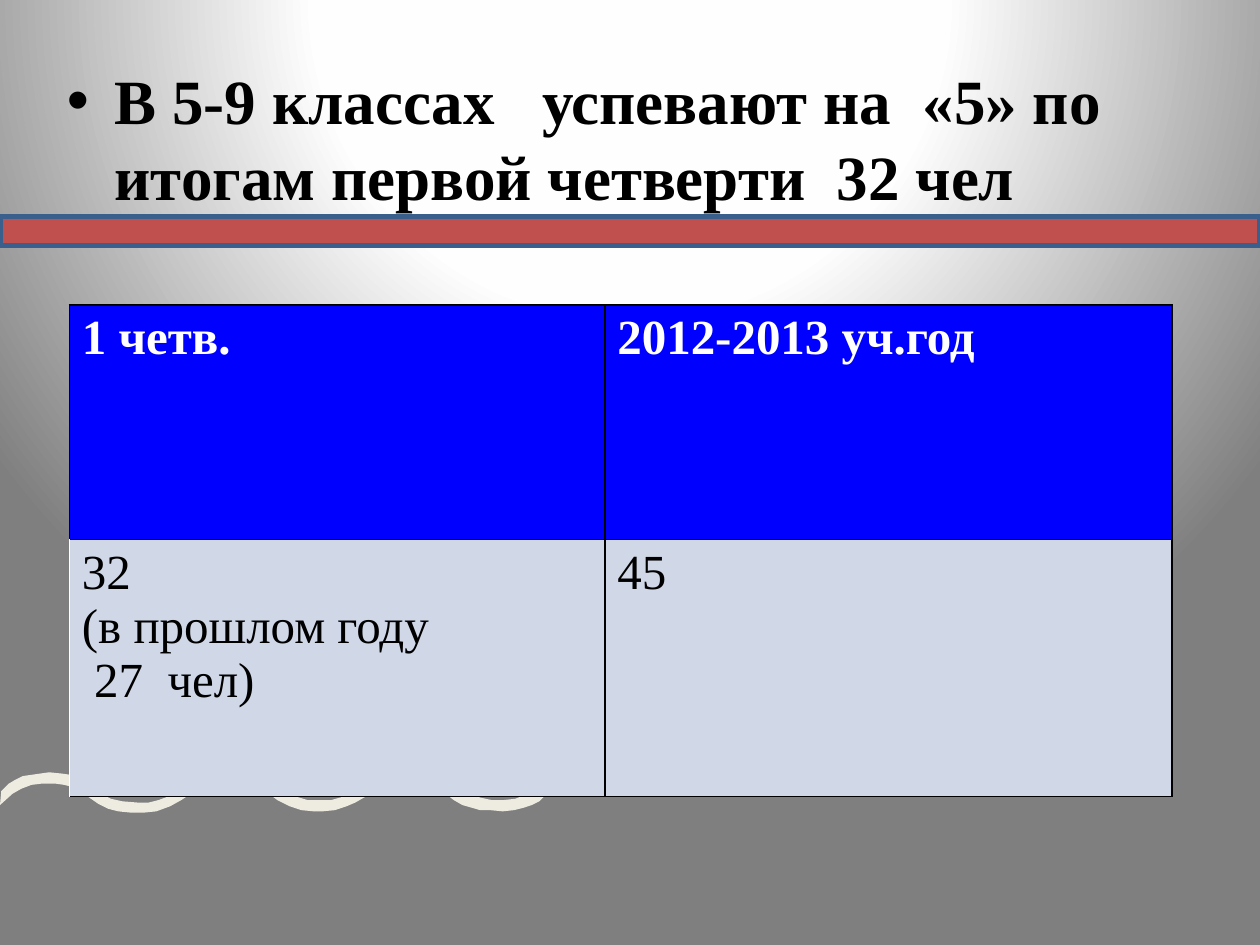
from lxml import etree
from pptx import Presentation
from pptx.dml.color import RGBColor
from pptx.oxml import parse_xml
from pptx.oxml.ns import nsdecls, qn
from pptx.enum.shapes import MSO_SHAPE
from pptx.enum.text import MSO_ANCHOR, MSO_AUTO_SIZE
from pptx.util import Pt

RECT = MSO_SHAPE.RECTANGLE
TOP = MSO_ANCHOR.TOP
NO_FIT = MSO_AUTO_SIZE.NONE

PX = 9144  # 100 px to the inch
FONT = "Times New Roman"
COLORS = {
    "white": "FFFFFF", "near_white": "FEFEFE", "gray": "7F7F7F", "black": "000000",
    "cream": "EEECE1", "blue": "0000FF", "pale": "D0D8E8",
    "red": "C0504D", "steel": "3A5F8C",
}
STOPS = [(0, "white"), (40, "near_white"), (100, "gray")]

# Outline of the wavy ribbon, in px from the corner of its box
WAVE = [
    (1, 17), (7, 11), (12, 8), (18, 5), (25, 4), (39, 2), (49, 3), (56, 4), (62, 6),
    (71, 11), (82, 20), (88, 23), (97, 25), (109, 26), (118, 26), (126, 24), (134, 21),
    (140, 17), (149, 10), (156, 7), (165, 3), (173, 1), (181, 1), (194, 2), (205, 4),
    (211, 7), (219, 12), (227, 18), (234, 21), (244, 24), (263, 24), (270, 22), (277, 20),
    (284, 15), (296, 7), (305, 4), (311, 2), (320, 1), (331, 0), (340, 1), (348, 4),
    (354, 6), (360, 10), (368, 16), (374, 19), (381, 22), (390, 24), (400, 24), (409, 23),
    (419, 19), (428, 12), (430, 11), (432, 11), (434, 12), (435, 14), (435, 19), (432, 21),
    (428, 25), (422, 28), (416, 30), (408, 32), (399, 33), (389, 32), (381, 32), (374, 30),
    (367, 28), (360, 24), (350, 16), (343, 12), (336, 10), (327, 9), (319, 9), (308, 12),
    (296, 18), (282, 26), (275, 29), (266, 32), (256, 33), (249, 33), (239, 32), (230, 29),
    (220, 24), (208, 15), (202, 12), (196, 10), (186, 9), (177, 9), (169, 10), (159, 14),
    (144, 24), (135, 29), (124, 33), (114, 34), (104, 34), (94, 33), (86, 31), (78, 27),
    (65, 18), (59, 14), (51, 12), (44, 11), (33, 11), (25, 12), (17, 15), (10, 19), (0, 28),
]


def rgb(name):
    return RGBColor.from_string(COLORS[name])


def emu(*lengths):
    return [n * PX for n in lengths]


def format_font(font, color, **values):
    font.color.rgb = rgb(color)
    for name, value in {"name": FONT, **values}.items():
        setattr(font, name, value)


def add_background(slide):
    """Radial gradient centred above the top edge."""
    fill = slide.background.fill
    fill.solid()
    solid = slide.element.find(".//" + qn("p:bgPr")).find(qn("a:solidFill"))
    stops = "".join(
        f'<a:gs pos="{pos * 1000}"><a:srgbClr val="{COLORS[c]}"/></a:gs>' for pos, c in STOPS)
    solid.getparent().replace(solid, parse_xml(
        f'<a:gradFill rotWithShape="1" {nsdecls("a")}><a:gsLst>{stops}</a:gsLst>'
        '<a:path path="circle"><a:fillToRect l="50000" t="-80000" r="50000" b="180000"/>'
        '</a:path></a:gradFill>'))


def add_wave(slide, left, top):
    points = [(left + x, top + y) for x, y in WAVE]
    builder = slide.shapes.build_freeform(*points[0], scale=PX)
    builder.add_line_segments(points[1:], close=True)
    sp = builder.convert_to_shape()
    sp.shadow.inherit = False
    sp.fill.solid()
    sp.fill.fore_color.rgb = rgb("cream")
    sp.line.fill.background()


def fill_body(body, box, text):
    body.left, body.top, body.width, body.height = emu(*box)
    tf = body.text_frame
    tf.auto_size = NO_FIT
    tf.vertical_anchor = TOP
    p = tf.paragraphs[0]
    pPr = p._p.get_or_add_pPr()
    pPr.set("marL", str(38 * PX))
    pPr.set("indent", str(-38 * PX))
    etree.SubElement(pPr, qn("a:buFont")).set("typeface", "Arial")
    etree.SubElement(pPr, qn("a:buChar")).set("char", "•")
    p.space_before = Pt(0)
    r = p.add_run()
    r.text = text
    format_font(r.font, "black", size=Pt(36), bold=True)


def set_borders(cell, left="black"):
    tcPr = cell._tc.get_or_add_tcPr()
    sides = {"lnL": left, "lnR": "black", "lnT": "black", "lnB": "black"}
    for i, (side, color) in enumerate(sides.items()):
        tcPr.insert(i, parse_xml(
            f'<a:{side} w="{Pt(1)}" {nsdecls("a")}><a:solidFill>'
            f'<a:srgbClr val="{COLORS[color]}"/></a:solidFill></a:{side}>'))


def add_results(slide, left, top, widths, heights, rows):
    frame = slide.shapes.add_table(
        len(heights), len(widths), *emu(left, top, sum(widths), sum(heights)))
    table = frame.table
    for col, width in zip(table.columns, widths):
        col.width = width * PX
    for i, (row, height, texts) in enumerate(zip(table.rows, heights, rows)):
        row.height = height * PX
        header = i == 0
        for j, text in enumerate(texts):
            cell = table.cell(i, j)
            cell.text = text
            cell.fill.solid()
            cell.fill.fore_color.rgb = rgb("blue" if header else "pale")
            set_borders(cell, "white" if not header and j == 0 else "black")
            for p in cell.text_frame.paragraphs:
                for r in p.runs:
                    format_font(r.font, "white" if header else "black",
                                size=Pt(28), bold=header)


def add_divider(slide, *box):
    sp = slide.shapes.add_shape(RECT, *emu(*box))
    sp.shadow.inherit = False
    sp.fill.solid()
    sp.fill.fore_color.rgb = rgb("red")
    sp.line.color.rgb = rgb("steel")
    sp.line.width = Pt(3)


def main():
    prs = Presentation()
    prs.slide_width, prs.slide_height = emu(1000, 750)
    slide = prs.slides.add_slide(prs.slide_layouts[1])
    title, body = slide.placeholders
    title.element.getparent().remove(title.element)

    add_background(slide)
    add_wave(slide, 0, 611)
    slide.shapes._spTree.append(body.element)  # bring the text in front of the wave
    fill_body(body, (43, 44, 929, 628),
              "В 5-9 классах   успевают на  «5» по итогам первой четверти  32 чел")
    add_results(slide, 55, 242, [425, 450], [186, 204], [
        ["1 четв.", "2012-2013 уч.год"],
        ["32\n(в прошлом году\n 27  чел)", "45"],
    ])
    add_divider(slide, 0, 172, 1000, 23)
    prs.save("out.pptx")


if __name__ == "__main__":
    main()
